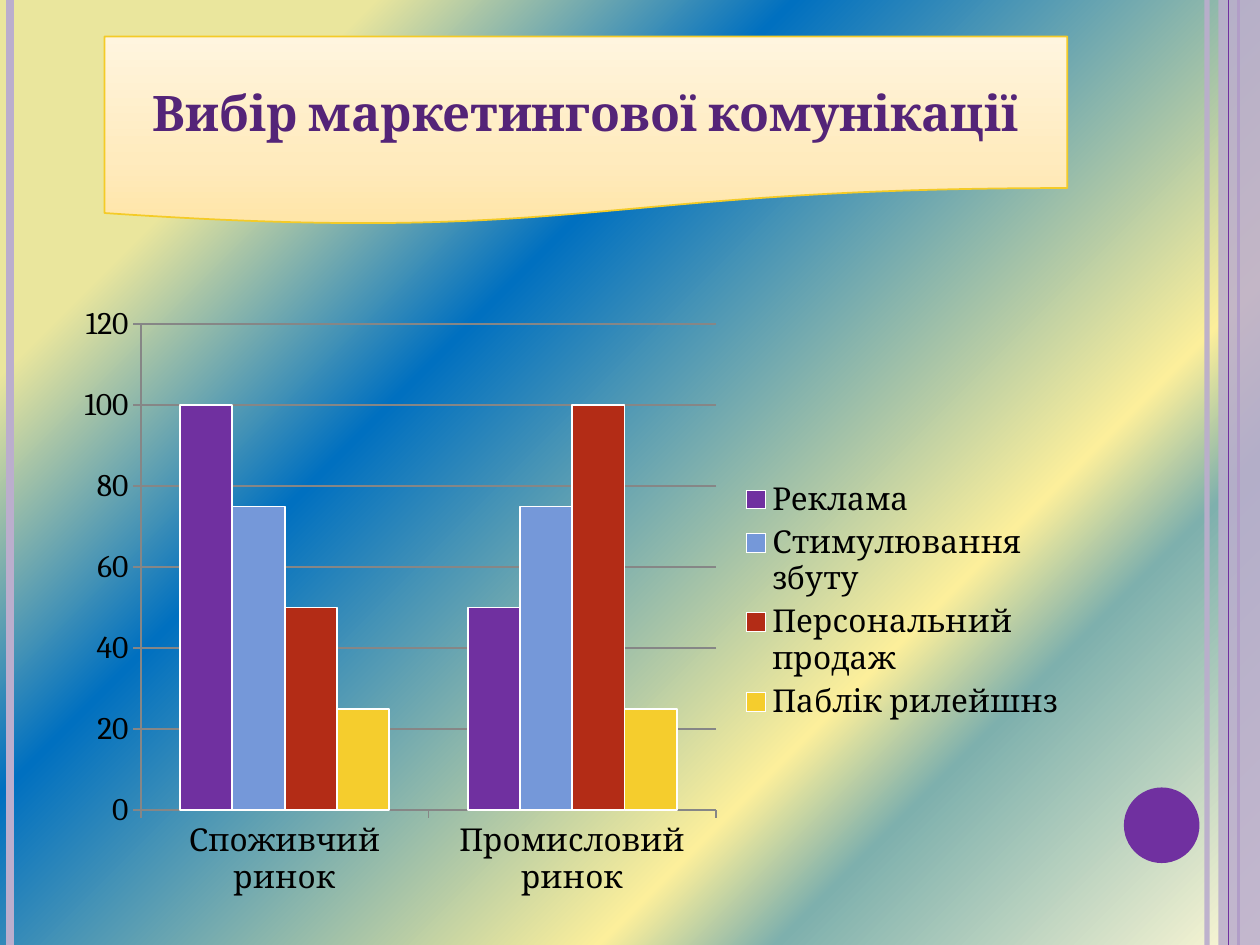
from lxml import etree
from pptx import Presentation
from pptx.chart.data import CategoryChartData
from pptx.dml.color import RGBColor
from pptx.enum.chart import XL_CHART_TYPE, XL_LEGEND_POSITION, XL_TICK_MARK
from pptx.enum.shapes import MSO_CONNECTOR, MSO_SHAPE
from pptx.enum.text import MSO_ANCHOR, PP_ALIGN
from pptx.oxml.ns import qn
from pptx.util import Inches, Pt

CLUSTERED = XL_CHART_TYPE.COLUMN_CLUSTERED
LEGEND_RIGHT = XL_LEGEND_POSITION.RIGHT
TICK_OUT = XL_TICK_MARK.OUTSIDE
TICK_NONE = XL_TICK_MARK.NONE
STRAIGHT = MSO_CONNECTOR.STRAIGHT
RECTANGLE = MSO_SHAPE.RECTANGLE
OVAL = MSO_SHAPE.OVAL
DOCUMENT = MSO_SHAPE.FLOWCHART_DOCUMENT
MIDDLE = MSO_ANCHOR.MIDDLE
CENTER = PP_ALIGN.CENTER

FONT = "Cambria"
PURPLE = RGBColor(0x70, 0x30, 0xA0)
LILAC = RGBColor(0xBB, 0xAE, 0xCD)
TITLE_PURPLE = RGBColor(0x54, 0x24, 0x78)
BLUE = RGBColor(0x75, 0x98, 0xD9)
RED = RGBColor(0xB3, 0x2C, 0x16)
YELLOW = RGBColor(0xF5, 0xCD, 0x2D)
GOLD = RGBColor(0xF4, 0xCB, 0x27)
GRAY = RGBColor(0x86, 0x86, 0x86)
BLACK = RGBColor(0, 0, 0)
WHITE = RGBColor(0xFF, 0xFF, 0xFF)

BACKGROUND_STOPS = [
    (17, RGBColor(0xEA, 0xE6, 0x9D)),
    (36, RGBColor(0x00, 0x70, 0xC0)),
    (70, RGBColor(0xFC, 0xEF, 0x9B)),
    (78, RGBColor(0x7E, 0xB0, 0xAD)),
    (100, RGBColor(0xFF, 0xF9, 0xD5)),
]
BANNER_STOPS = [
    (0, RGBColor(0xFF, 0xE5, 0xA7)),
    (35, RGBColor(0xFF, 0xEB, 0xBE)),
    (100, RGBColor(0xFF, 0xF5, 0xDF)),
]
MARKETS = ["Споживчий ринок", "Промисловий ринок"]
TOOLS = [
    ("Реклама", (100, 50), PURPLE),
    ("Стимулювання збуту", (75, 75), BLUE),
    ("Персональний продаж", (50, 100), RED),
    ("Паблік рилейшнз", (25, 25), YELLOW),
]


def set_gradient(fill, owner, stops, clockwise_angle):
    fill.gradient()
    fill.gradient_angle = 360 - clockwise_angle
    stop_list = next(owner.iter(qn("a:gsLst")))
    for old_stop in list(stop_list):
        stop_list.remove(old_stop)
    for percent, color in stops:
        stop = etree.SubElement(stop_list, qn("a:gs"), pos=str(percent * 1000))
        etree.SubElement(stop, qn("a:srgbClr"), val=str(color))


def set_opacity(element, percent):
    color = next(element.iter(qn("a:srgbClr")))
    etree.SubElement(color, qn("a:alpha"), val=str(percent * 1000))


def add_stripe(slide, x, color, width):
    stripe = slide.shapes.add_connector(
        STRAIGHT, Inches(x), Inches(0), Inches(x), Inches(7.5))
    stripe.line.color.rgb = color
    stripe.line.width = Pt(width)
    etree.SubElement(stripe._element.spPr, qn("a:effectLst"))
    return stripe


def add_solid(slide, preset, left, top, width, height, color):
    solid = slide.shapes.add_shape(
        preset, Inches(left), Inches(top), Inches(width), Inches(height))
    solid.shadow.inherit = False
    solid.fill.solid()
    solid.fill.fore_color.rgb = color
    solid.line.fill.background()
    return solid


def add_frame(slide):
    set_opacity(add_stripe(slide, 9.58, LILAC, 3)._element, 93)
    add_stripe(slide, 0.08, LILAC, 4.5)
    add_stripe(slide, 9.83, PURPLE, 1.5)
    band = add_solid(slide, RECTANGLE, 9.67, 0, 0.33, 7.5, LILAC)
    set_opacity(band._element, 87)
    add_stripe(slide, 9.75, PURPLE, 0.75)
    add_solid(slide, OVAL, 8.92, 6.25, 0.6, 0.6, PURPLE)


def keep_labels_level(axis):
    axis.tick_labels.font.size = Pt(18)
    label_body = next(axis._element.iter(qn("a:bodyPr")))
    label_body.set("rot", "0")
    label_body.set("vert", "horz")


def add_market_chart(slide):
    data = CategoryChartData()
    data.categories = MARKETS
    for name, values, _ in TOOLS:
        data.add_series(name, values)
    chart = slide.shapes.add_chart(
        CLUSTERED, Inches(0.51), Inches(2.33), Inches(8.05), Inches(4.88),
        data).chart
    chart.has_title = False
    chart.font.name = FONT
    chart.font.size = Pt(18)
    chart.font.color.rgb = BLACK
    chart.has_legend = True
    chart.legend.position = LEGEND_RIGHT
    chart.legend.include_in_layout = False

    plot = chart.plots[0]
    plot.gap_width = 150
    plot.overlap = 0
    plot.vary_by_categories = False
    for series, (_, _, color) in zip(plot.series, TOOLS):
        series.format.fill.solid()
        series.format.fill.fore_color.rgb = color
        series.format.line.color.rgb = WHITE
        series.format.line.width = Pt(1)

    chart.value_axis.has_major_gridlines = True
    for axis in (chart.category_axis, chart.value_axis):
        axis.major_tick_mark = TICK_OUT
        axis.minor_tick_mark = TICK_NONE
        axis.format.line.color.rgb = GRAY
        axis.format.line.width = Pt(1)
        keep_labels_level(axis)
    gridline = chart.value_axis.major_gridlines.format.line
    gridline.color.rgb = GRAY
    gridline.width = Pt(1)


def add_banner(slide, title):
    banner = slide.shapes.add_shape(
        DOCUMENT, Inches(0.83), Inches(0.29), Inches(7.64), Inches(1.5))
    banner.shadow.inherit = False
    set_gradient(banner.fill, banner._element, BANNER_STOPS, 270)
    banner.line.color.rgb = GOLD
    banner.line.width = Pt(1)
    frame = banner.text_frame
    frame.word_wrap = True
    frame.vertical_anchor = MIDDLE
    heading = frame.paragraphs[0]
    heading.text = title
    heading.alignment = CENTER
    heading.font.name = FONT
    heading.font.size = Pt(28)
    heading.font.bold = True
    heading.font.color.rgb = TITLE_PURPLE


def main():
    deck = Presentation()
    deck.slide_width = Inches(10)
    deck.slide_height = Inches(7.5)
    slide = deck.slides.add_slide(deck.slide_layouts[6])
    set_gradient(slide.background.fill, slide._element, BACKGROUND_STOPS, 45)
    add_frame(slide)
    add_market_chart(slide)
    add_banner(slide, "Вибір маркетингової комунікації")
    deck.save("out.pptx")


if __name__ == "__main__":
    main()
